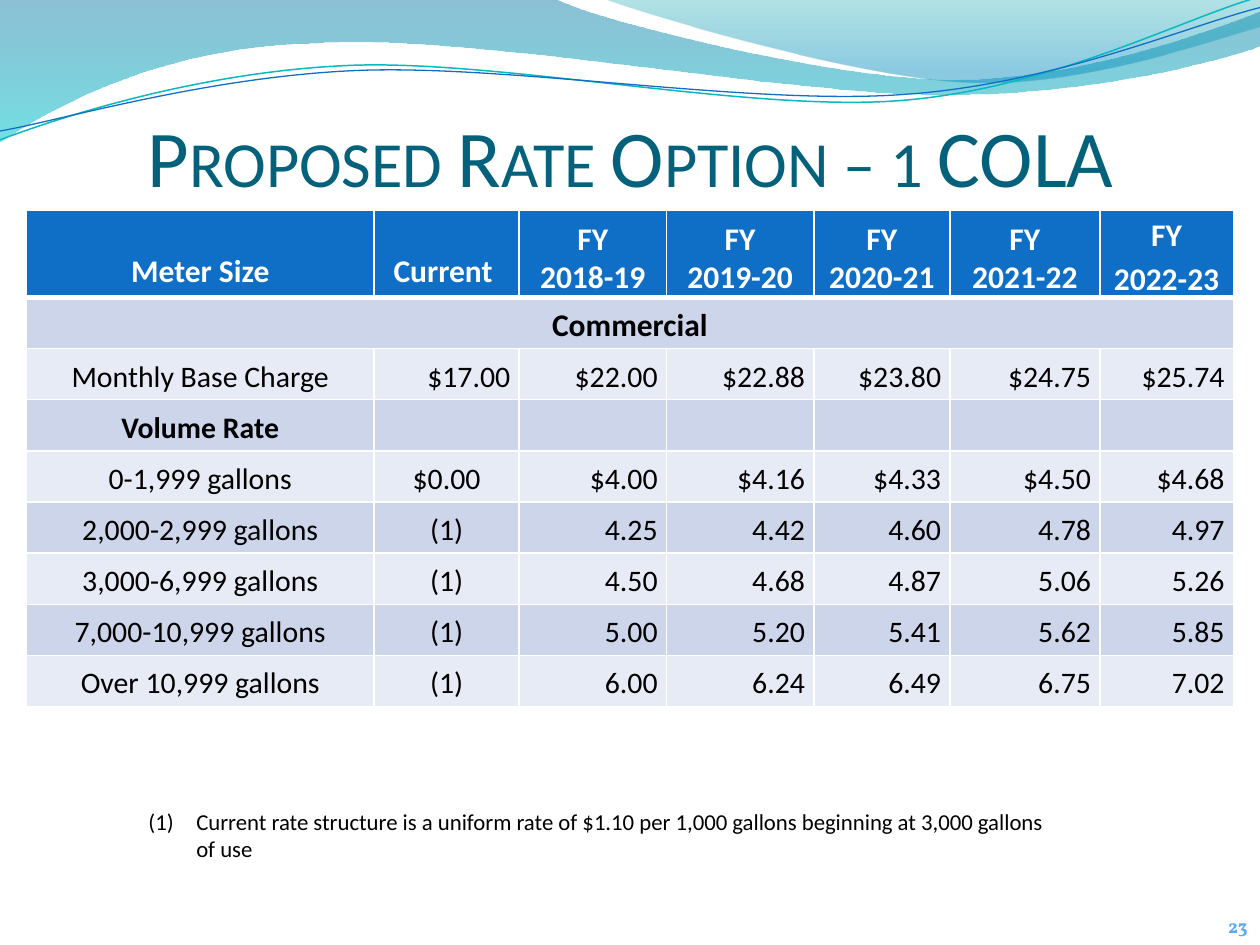
import pptx
import pptx.dml.color
import pptx.enum.text
import pptx.oxml
import pptx.oxml.ns
import pptx.util

Inches, Pt = pptx.util.Inches, pptx.util.Pt
RGB = pptx.dml.color.RGBColor
ALIGN, ANCHOR = pptx.enum.text.PP_ALIGN, pptx.enum.text.MSO_ANCHOR
qn, NS = pptx.oxml.ns.qn, pptx.oxml.ns.nsdecls("a")

WHITE, BLACK = RGB(255, 255, 255), RGB(0, 0, 0)
BLUE, TEAL = RGB(0x0F, 0x6F, 0xC6), RGB(0x0A, 0xB8, 0xBF)
INK, SKY = RGB(0x04, 0x61, 0x7B), RGB(0x59, 0xAA, 0xF2)
DARK, LIGHT = RGB(0xCC, 0xD5, 0xEA), RGB(0xE7, 0xEB, 0xF5)

TITLE = "Proposed Rate Option – 1 COLA"
NOTE = ("Current rate structure is a uniform rate of $1.10 per 1,000 gallons "
        "beginning at 3,000 gallons of use")
COLS = [2.76, 1.15, 1.17, 1.17, 1.08, 1.19, 1.06]
HEAD, TALL = 0.68, 3.93
ROWS = [
    ["Meter Size", "Current ", "FY\n2018-19", "FY\n2019-20", "FY\n2020-21",
     "FY\n2021-22", "FY\n2022-23"],
    ["Commercial"],
    ["Monthly Base Charge", "$17.00", "$22.00", "$22.88", "$23.80", "$24.75", "$25.74"],
    ["Volume Rate"],
    ["0-1,999 gallons", "$0.00", "$4.00", "$4.16", "$4.33", "$4.50", "$4.68"],
    ["2,000-2,999 gallons", "(1)", "4.25", "4.42", "4.60", "4.78", "4.97"],
    ["3,000-6,999 gallons", "(1)", "4.50", "4.68", "4.87", "5.06", "5.26"],
    ["7,000-10,999 gallons", "(1)", "5.00", "5.20", "5.41", "5.62", "5.85"],
    ["Over 10,999 gallons", "(1)", "6.00", "6.24", "6.49", "6.75", "7.02"],
]

# A step of two numbers is a line; a step of six is a cubic curve.
# Gradient stops: position, colour, opacity in percent.
BANDS = [
    ([(0, 0), (4.4, -0.01), (4.76, 0.17, 6.64, 0.63, 7.58, 0.63),
      (8.53, 0.63, 9.58, 0.26, 10, 0.09), (10.01, 0.36),
      (9.83, 0.44, 8.7, 0.76, 7.46, 0.75), (6.22, 0.75, 3.82, 0.28, 2.57, 0.34),
      (1.29, 0.36, 0.46, 0.83, -0.01, 1.13)],
     [(0, RGB(0, 0x74, 0xA1), 45), (1, RGB(0, 0xC6, 0xCF), 55)]),
    ([(4.79, -0.01), (5.09, 0.11, 6.82, 0.62, 7.69, 0.65),
      (8.56, 0.69, 9.61, 0.32, 10, 0.21), (10, 0)],
     [(0, RGB(0, 0xA1, 0xA9), 30), (0.8, RGB(0, 0x8B, 0xBF), 45)]),
]
WAVES = [
    ([(0, 1.11), (0.48, 0.93, 1.58, 0.57, 2.77, 0.52),
      (3.95, 0.47, 5.93, 0.89, 7.13, 0.8), (8.33, 0.71, 9.38, 0.15, 9.98, -0.02)],
     TEAL, 0.85),
    ([(0, 1.04), (0.47, 0.96, 1.64, 0.61, 2.83, 0.56),
      (4.03, 0.51, 5.97, 0.84, 7.17, 0.75), (8.36, 0.67, 9.41, 0.21, 10, 0.06)],
     BLUE, 0.75),
]


def outline(slide, steps, close):
    """Draw every point as a line, then join the points of each curve."""
    pts = [(round(s[i] * 100), round(s[i + 1] * 100))
           for s in steps for i in range(0, len(s), 2)]
    pen = slide.shapes.build_freeform(*pts[0], scale=Inches(1) / 100)
    pen.add_line_segments(pts[1:], close=close)
    shape = pen.convert_to_shape()
    shape.shadow.inherit = False
    lines = iter(list(shape._element.spPr.iter(qn("a:lnTo"))))
    for step in steps[1:]:
        first = next(lines)
        if len(step) == 6:
            curve = pptx.oxml.parse_xml(f"<a:cubicBezTo {NS}/>")
            first.addprevious(curve)
            for line in (first, next(lines), next(lines)):
                curve.append(line[0])
                line.getparent().remove(line)
    return shape


def add_band(slide, steps, stops):
    shape = outline(slide, steps, True)
    shape.line.fill.background()
    shape.fill.gradient()
    shape.fill.gradient_angle = 270
    for stop, (pos, tone, _) in zip(shape.fill.gradient_stops, stops):
        stop.position, stop.color.rgb = pos, tone
    for node, (_, _, part) in zip(shape._element.spPr.iter(qn("a:srgbClr")), stops):
        node.append(pptx.oxml.parse_xml(f'<a:alpha {NS} val="{part * 1000}"/>'))


def add_wave(slide, steps, tone, width):
    shape = outline(slide, steps, False)
    shape.fill.background()
    shape.line.color.rgb, shape.line.width = tone, Pt(width)


def put(frame, text, tone, align=ALIGN.LEFT, **font):
    para = frame.paragraphs[0]
    para.alignment = align
    for i, part in enumerate(text.split("\n")):
        if i:
            para.add_line_break()
        run = para.add_run()
        run.text = part
        run.font.color.rgb = tone
        for key, val in {"name": "Calibri", "bold": False, **font}.items():
            setattr(run.font, key, val)
    return para


def add_box(slide, at, **form):
    frame = slide.shapes.add_textbox(*map(Inches, at)).text_frame
    for key, val in {"word_wrap": True, **form}.items():
        setattr(frame, key, val)
    return frame


def edge(cell, base):
    for side, width in {"L": 1, "R": 1, "T": 1, "B": base}.items():
        cell._tc.get_or_add_tcPr().append(pptx.oxml.parse_xml(
            f'<a:ln{side} {NS} w="{Pt(width)}">'
            f'<a:solidFill><a:srgbClr val="{WHITE}"/></a:solidFill></a:ln{side}>'))


def add_rates(slide):
    table = slide.shapes.add_table(len(ROWS), len(COLS), Inches(0.21), Inches(1.67),
                                   Inches(sum(COLS)), Inches(TALL)).table
    table.horz_banding = False
    for col, width in zip(table.columns, COLS):
        col.width = Inches(width)
    for r, row in enumerate(ROWS):
        table.rows[r].height = Inches((TALL - HEAD) / (len(ROWS) - 1) if r else HEAD)
        for c in range(len(COLS)):
            cell = table.cell(r, c)
            edge(cell, 1 if r else 3)
            cell.fill.solid()
            cell.fill.fore_color.rgb = (DARK if r % 2 else LIGHT) if r else BLUE
            cell.vertical_anchor = ANCHOR.MIDDLE if r else ANCHOR.BOTTOM
            if r or c > 1:
                cell.margin_left = cell.margin_right = Inches(0.07)
                cell.margin_top = cell.margin_bottom = 0
            if c >= len(row):
                continue
            right = r and (c > 1 or row[c] == "$17.00")
            para = put(cell.text_frame, row[c], BLACK if r else WHITE,
                       ALIGN.RIGHT if right else ALIGN.CENTER,
                       size=Pt(17 if r > 1 else 18), bold=r == 0 or len(row) == 1)
            if r or c == len(COLS) - 1:
                para.line_spacing = 1.15
    table.cell(1, 0).merge(table.cell(1, len(COLS) - 1))


def main():
    deck = pptx.Presentation()
    deck.slide_width, deck.slide_height = Inches(10), Inches(7.5)
    slide = deck.slides.add_slide(deck.slide_layouts[6])
    for band in BANDS:
        add_band(slide, *band)
    for wave in WAVES:
        add_wave(slide, *wave)
    put(add_box(slide, (8.42, 7.21, 1.58, 0.29)), "23", SKY, ALIGN.RIGHT,
        name="Vollkorn", size=Pt(11), bold=True)
    head = add_box(slide, (0.01, 0.75, 9.99, 0.92), vertical_anchor=ANCHOR.MIDDLE,
                   margin_left=0, margin_right=0, margin_bottom=0)
    para = put(head, TITLE, INK, ALIGN.CENTER, size=Pt(46))
    para.runs[0]._r.get_or_add_rPr().set("cap", "small")
    add_rates(slide)
    para = put(add_box(slide, (1.08, 6.36, 7.33, 0.54)), NOTE, BLACK, size=Pt(13))
    props = para._p.get_or_add_pPr()
    props.set("marL", str(Inches(0.38)))
    props.set("indent", str(-Inches(0.38)))
    props.append(pptx.oxml.parse_xml(f'<a:buAutoNum {NS} type="arabicParenBoth"/>'))
    deck.save("out.pptx")


if __name__ == "__main__":
    main()
